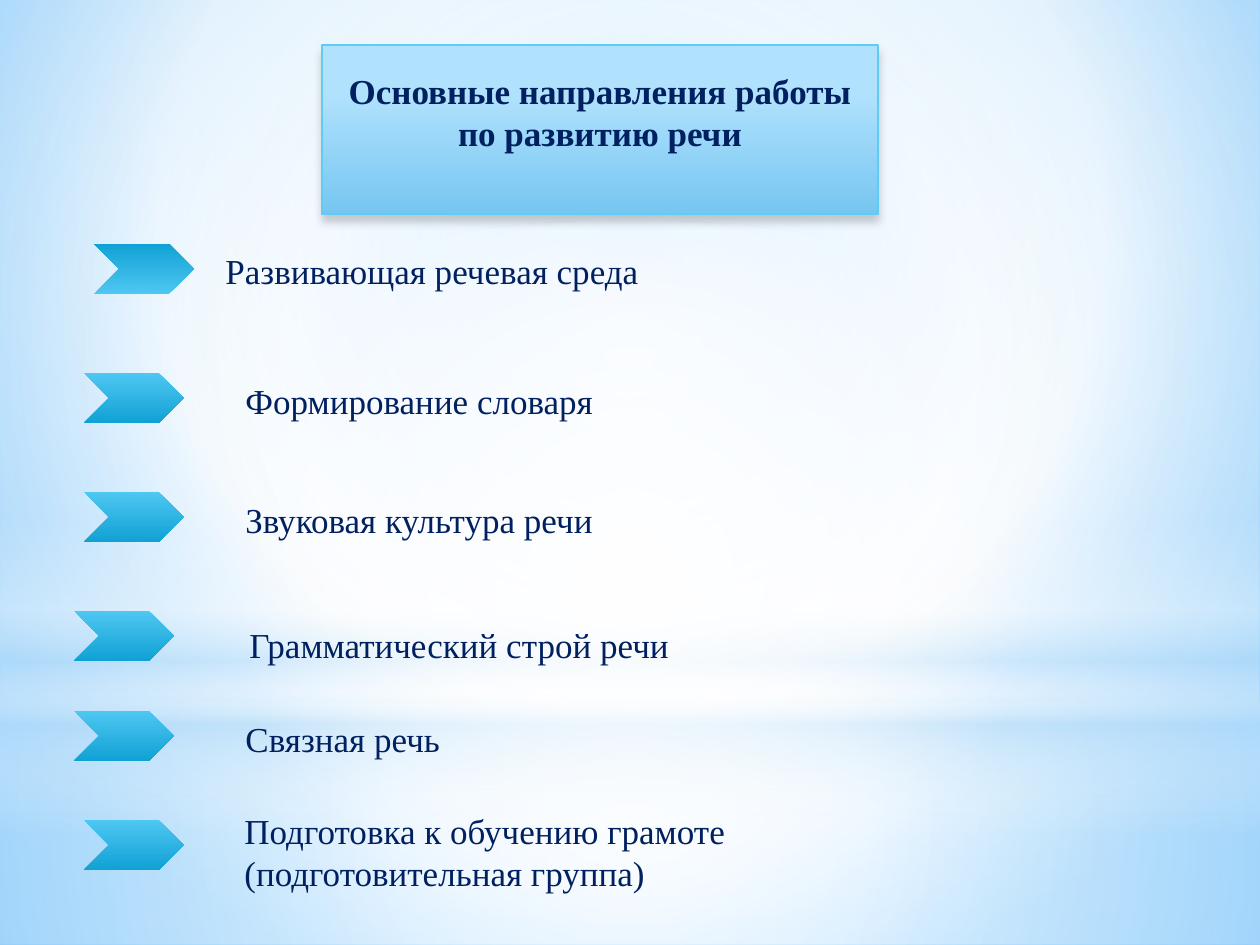
from lxml import etree
from pptx import Presentation
from pptx.dml.color import RGBColor
from pptx.enum.shapes import MSO_SHAPE
from pptx.enum.text import MSO_ANCHOR, MSO_AUTO_SIZE, PP_ALIGN
from pptx.oxml.ns import qn
from pptx.util import Pt

PX = 914400 / 126
W, H = 1260, 945
FONT = "Times New Roman"
RECT, OVAL, CHEVRON = MSO_SHAPE.RECTANGLE, MSO_SHAPE.OVAL, MSO_SHAPE.CHEVRON
MIDDLE, CENTER = MSO_ANCHOR.MIDDLE, PP_ALIGN.CENTER
NO_FIT, GROW = MSO_AUTO_SIZE.NONE, MSO_AUTO_SIZE.SHAPE_TO_FIT_TEXT
COLORS = {
    "white": "FFFFFF", "haze": "B4DCFA", "sky": "9ED5FF", "edge": "5BB9FF",
    "light": "4EC7F2", "deep": "11A1D4", "navy": "002060", "border": "5ECCF3",
    "title_top": "B1E2FD", "title_bottom": "76C6F1", "shadow": "000000",
}
MIDPOINT = (50, 50, 50, 50)

# Backdrop layers: shape, box, stops (position, colour, opacity), focus or None for linear
BACKDROP = [
    (RECT, (0, 703, W, 242),
     [(0, "white", 91), (37, "white", 76), (100, "haze", 79)], MIDPOINT),
    (RECT, (0, 0, W, 703),
     [(0, "white", 89), (48, "white", 62), (100, "haze", 79)], MIDPOINT),
    (RECT, (0, 519, W, 315),
     [(0, "white", 0), (29, "white", 30), (45, "haze", 40), (55, "white", 26),
      (65, "haze", 60), (100, "white", 0)], None),
    (OVAL, (0, 221, W, 703), [(0, "white", 100), (56, "white", 0)], MIDPOINT),
]

# Directions: text, chevron (left, top), text box (left, top, width, height)
DIRECTIONS = [
    ("Развивающая речевая среда", (94, 244), (213, 243, 496, 55)),
    ("Формирование словаря", (84, 373), (233, 373, 484, 55)),
    ("Звуковая культура речи", (84, 492), (233, 492, 426, 55)),
    ("Грамматический строй речи", (74, 611), (237, 617, 493, 55)),
    ("Связная речь", (74, 711), (233, 711, 231, 55)),
    ("Подготовка к обучению грамоте (подготовительная группа)",
     (84, 820), (232, 803, 567, 97)),
]


def emu(*lengths):
    return [round(n * PX) for n in lengths]


def add_color(parent, name, opacity=100):
    clr = etree.SubElement(parent, qn("a:srgbClr"), val=COLORS[name])
    if opacity < 100:
        etree.SubElement(clr, qn("a:alpha"), val=str(opacity * 1000))


def set_gradient(fill, element, stops, focus=None):
    """Fill with a vertical gradient, or a circular one around a focus."""
    fill.solid()
    solid = next(element.iter(qn("a:solidFill")))
    grad = etree.Element(qn("a:gradFill"), rotWithShape="1")
    gs_lst = etree.SubElement(grad, qn("a:gsLst"))
    for pos, name, opacity in stops:
        gs = etree.SubElement(gs_lst, qn("a:gs"), pos=str(pos * 1000))
        add_color(gs, name, opacity)
    if focus:
        circle = etree.SubElement(grad, qn("a:path"), {"path": "circle"})
        sides = {k: str(v * 1000) for k, v in zip("ltrb", focus)}
        etree.SubElement(circle, qn("a:fillToRect"), sides)
    else:
        etree.SubElement(grad, qn("a:lin"), ang="5400000", scaled="0")
    solid.getparent().replace(solid, grad)


def add_gradient_shape(slide, kind, box, stops, focus=None):
    sp = slide.shapes.add_shape(kind, *emu(*box))
    sp.shadow.inherit = False
    set_gradient(sp.fill, sp.element, stops, focus)
    sp.line.fill.background()
    return sp


def style_text(tf, text, bold=False):
    tf.word_wrap = True
    tf.text = text
    p = tf.paragraphs[0]
    font = p.runs[0].font
    font.name, font.size, font.bold = FONT, Pt(20), bold
    font.color.rgb = RGBColor.from_string(COLORS["navy"])
    return p


def add_backdrop(slide):
    set_gradient(slide.background.fill, slide.element,
                 [(0, "sky", 100), (60, "white", 100), (100, "edge", 100)],
                 (20, 10, 20, 60))
    for layer in BACKDROP:
        add_gradient_shape(slide, *layer)


def add_title(slide, box, text):
    title = slide.shapes.title
    title.left, title.top, title.width, title.height = emu(*box)
    slide.shapes.element.append(title.element)  # in front of the backdrop
    set_gradient(title.fill, title.element,
                 [(28, "title_top", 100), (100, "title_bottom", 100)])
    title.line.color.rgb = RGBColor.from_string(COLORS["border"])
    title.line.width = Pt(0.75)
    # Soft shadow below
    effects = etree.SubElement(title.element.spPr, qn("a:effectLst"))
    shadow = etree.SubElement(effects, qn("a:outerShdw"), blurRad=str(Pt(5)),
                              dist=str(Pt(4)), dir="5400000", rotWithShape="0")
    add_color(shadow, "shadow", 20)
    # Text sits a little above the middle
    tf = title.text_frame
    tf.auto_size = NO_FIT
    tf.vertical_anchor = MIDDLE
    tf.margin_bottom = emu(42)[0]
    style_text(tf, text, bold=True).alignment = CENTER


def add_direction(slide, text, corner, box, flipped):
    chevron = add_gradient_shape(slide, CHEVRON, (*corner, 100, 50),
                                 [(0, "light", 100), (100, "deep", 100)])
    if flipped:
        chevron.element.spPr.find(qn("a:xfrm")).set("flipV", "1")
    tf = slide.shapes.add_textbox(*emu(*box)).text_frame
    style_text(tf, text)
    tf.auto_size = GROW


def main():
    prs = Presentation()
    prs.slide_width, prs.slide_height = emu(W, H)
    slide = prs.slides.add_slide(prs.slide_layouts[5])
    add_backdrop(slide)
    add_title(slide, (322, 45, 556, 169), "Основные направления работы по развитию речи")
    for i, (text, corner, box) in enumerate(DIRECTIONS):
        add_direction(slide, text, corner, box, flipped=i == 0)
    prs.save("out.pptx")


if __name__ == "__main__":
    main()
